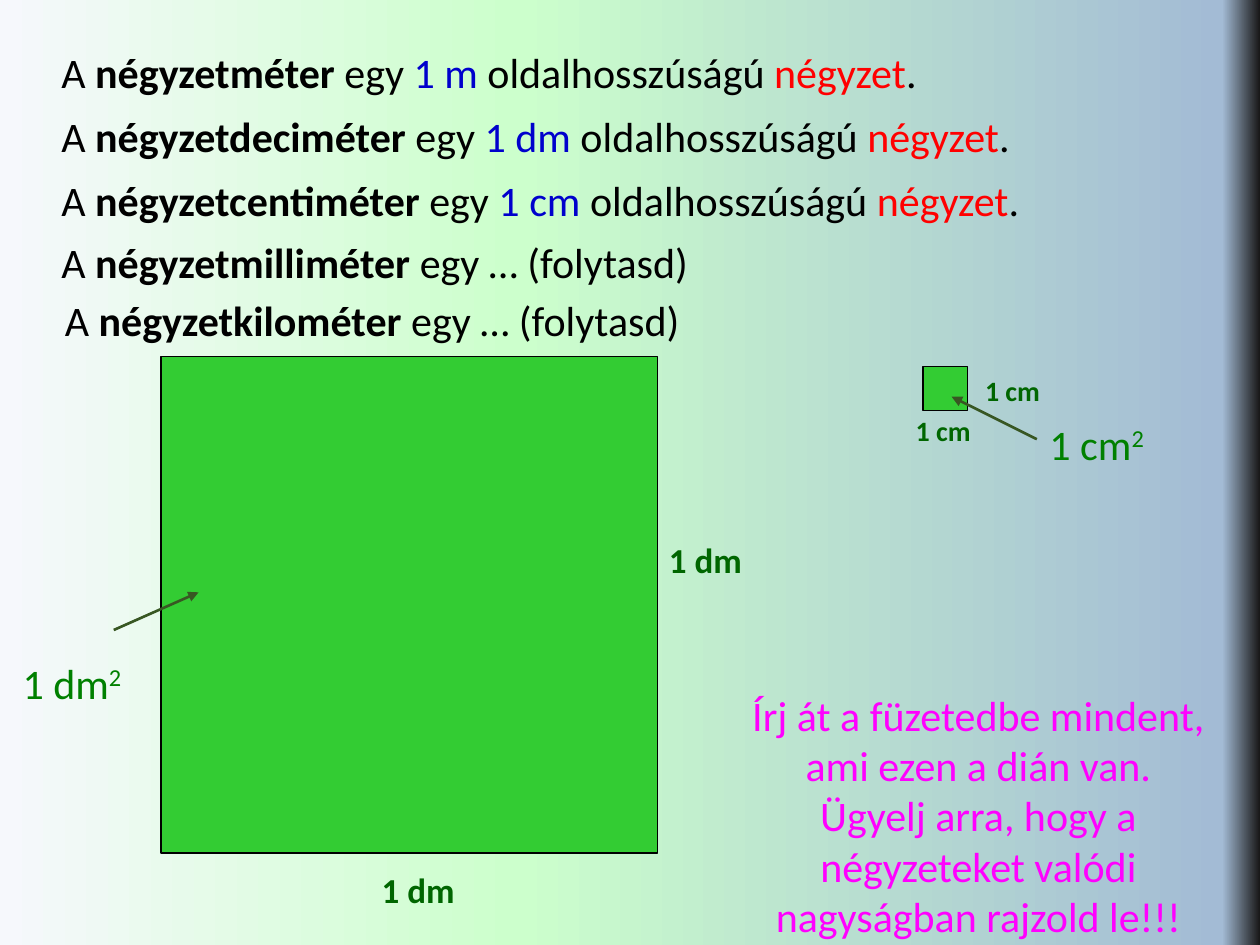
import pptx
import pptx.dml.color
import pptx.enum.shapes
import pptx.enum.text
import pptx.oxml
import pptx.oxml.ns
import pptx.util
from lxml import etree

Pt = pptx.util.Pt
RGBColor = pptx.dml.color.RGBColor
qn = pptx.oxml.ns.qn

BLACK = RGBColor(0x00, 0x00, 0x00)
BLUE = RGBColor(0x00, 0x00, 0xCC)
RED = RGBColor(0xFF, 0x00, 0x00)
MAGENTA = RGBColor(0xFF, 0x00, 0xFF)
SQUARE_GREEN = RGBColor(0x33, 0xCC, 0x33)
SIDE_GREEN = RGBColor(0x00, 0x66, 0x00)
AREA_GREEN = RGBColor(0x00, 0x80, 0x00)
ARROW_GREEN = RGBColor(0x38, 0x57, 0x23)
BACKGROUND_STOPS = [
    (0, RGBColor(0xF6, 0xF8, 0xFC)),
    (41, RGBColor(0xCC, 0xFF, 0xCC)),
    (97, RGBColor(0xA3, 0xBB, 0xD5)),
    (100, RGBColor(0x18, 0x17, 0x17)),
]


def add_text(shapes, left, top, width, height, size, color, text="", bold=None, wrap=True):
    box = shapes.add_textbox(Pt(left), Pt(top), Pt(width), Pt(height))
    box.text_frame.word_wrap = wrap
    box.text_frame.auto_size = pptx.enum.text.MSO_AUTO_SIZE.SHAPE_TO_FIT_TEXT
    paragraph = box.text_frame.paragraphs[0]
    paragraph.font.name = "Calibri"
    paragraph.font.size = Pt(size)
    paragraph.font.color.rgb = color
    paragraph.font.bold = bold
    if text:
        paragraph.add_run().text = text
    return paragraph


prs = pptx.Presentation()
prs.slide_width, prs.slide_height = Pt(720), Pt(540)
slide = prs.slides.add_slide(prs.slide_layouts[6])

background = slide.background.fill
background.gradient()
background.gradient_angle = 0
stop_list = next(slide.element.iter(qn("a:gsLst")))
for old_stop in list(stop_list):
    stop_list.remove(old_stop)
for position, color in BACKGROUND_STOPS:
    stop = etree.SubElement(stop_list, qn("a:gs"), pos=str(position * 1000))
    etree.SubElement(stop, qn("a:srgbClr"), val=str(color))

task = add_text(slide.shapes, 420.5, 390.2, 277.2, 152.6, 24, MAGENTA,
                "Írj át a füzetedbe mindent, ami ezen a dián van. "
                "Ügyelj arra, hogy a négyzeteket valódi nagyságban rajzold le!!!")
task.alignment = pptx.enum.text.PP_ALIGN.CENTER

definitions = [
    (28, 23, 528, "négyzetméter", "1 m"),
    (28, 59.5, 562, "négyzetdeciméter", "1 dm"),
    (28, 96, 567, "négyzetcentiméter", "1 cm"),
    (28, 131.8, 376, "négyzetmilliméter", None),
    (30, 165, 369, "négyzetkilométer", None),
]
for left, top, width, unit, side in definitions:
    definition = add_text(slide.shapes, left, top, width, 36.5, 24, BLACK, wrap=False)
    parts = [("A", None, None), (f" {unit} ", True, None)]
    if side:
        parts += [("egy ", None, None), (f"{side} ", None, BLUE),
                  ("oldalhosszúságú ", None, None), ("négyzet", None, RED), (".", None, None)]
    else:
        parts.append(("egy … (folytasd)", None, None))
    for text, bold, color in parts:
        run = definition.add_run()
        run.text = text
        if bold:
            run.font.bold = True
        if color:
            run.font.color.rgb = color

squares = [
    ("1 dm", (92, 203.8, 283.6), 20, [(211, 492.5, 57, 31.5), (375.2, 304, 57, 31.5)], False,
     (65, 360, 113.5, 338.5), (5.8, 372.2, 72.7, 36.4)),
    ("1 cm", (527.5, 209.3, 25.2), 16, [(516.2, 232.6, 46, 26.6), (555.8, 209.9, 46, 26.6)], True,
     (592.5, 251, 543.8, 226.7), (592.6, 235.4, 69.8, 36.4)),
]
for side, (left, top, edge), side_size, side_places, side_wrap, arrow_ends, area_place in squares:
    group = slide.shapes.add_group_shape()
    square = group.shapes.add_shape(pptx.enum.shapes.MSO_SHAPE.RECTANGLE,
                                    Pt(left), Pt(top), Pt(edge), Pt(edge))
    square.shadow.inherit = False
    square.fill.solid()
    square.fill.fore_color.rgb = SQUARE_GREEN
    square.line.color.rgb = BLACK
    square.line.width = Pt(0.75)
    for place in side_places:
        add_text(group.shapes, *place, side_size, SIDE_GREEN, side, bold=True, wrap=side_wrap)

    arrow = slide.shapes.add_connector(pptx.enum.shapes.MSO_CONNECTOR.STRAIGHT,
                                       *[Pt(value) for value in arrow_ends])
    arrow.line.color.rgb = ARROW_GREEN
    arrow.line.width = Pt(1.5)
    etree.SubElement(arrow.line.color and arrow.element.spPr.find(qn("a:ln")),
                     qn("a:tailEnd"), type="triangle")
    etree.SubElement(arrow.element.spPr, qn("a:effectLst"))

    area = add_text(slide.shapes, *area_place, 24, AREA_GREEN, side)
    exponent = area.add_run()
    exponent.text = "2"
    exponent._r.get_or_add_rPr().set("baseline", "30000")

prs.save("out.pptx")
